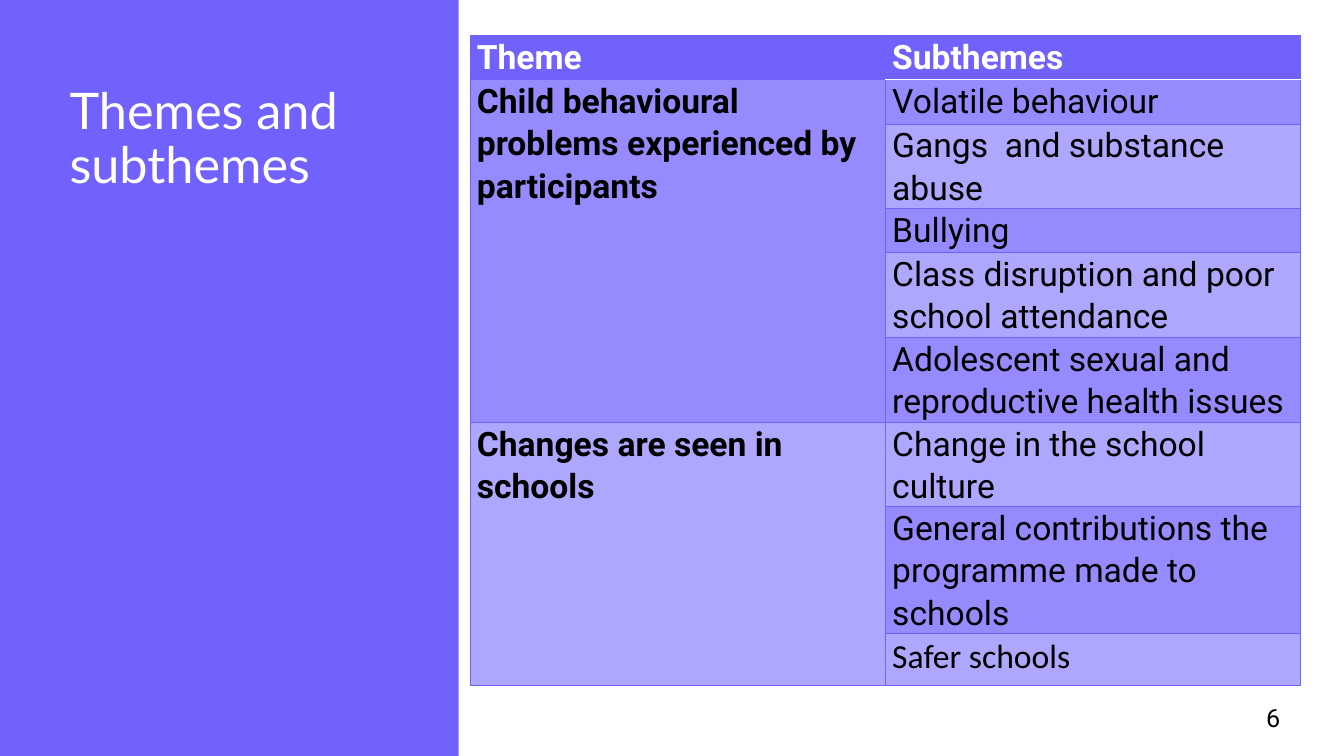
from lxml import etree
from pptx import Presentation
from pptx.dml.color import RGBColor
from pptx.enum import shapes, text
from pptx.oxml import ns
from pptx.util import Inches, Pt

PURPLE = RGBColor(0x71, 0x62, 0xFE)
MID_TINT = RGBColor(0x96, 0x8B, 0xFE)
LIGHT_TINT = RGBColor(0xAE, 0xA7, 0xFE)
WHITE = RGBColor(0xFF, 0xFF, 0xFF)
BLACK = RGBColor(0, 0, 0)

THEMES = [
    ("Child behavioural problems experienced by participants", [
        "Volatile behaviour",
        "Gangs  and substance abuse",
        "Bullying",
        "Class disruption and poor school attendance",
        "Adolescent sexual and reproductive health issues",
    ]),
    ("Changes are seen in schools", [
        "Change in the school culture",
        "General contributions the programme made to schools",
        "Safer schools",
    ]),
]
ROW_HEIGHTS = [0.44, 0.44, 0.83, 0.44, 0.84, 0.84, 0.84, 1.26, 0.51]


def write(tf, words, font="Roboto", size=24, color=BLACK, bold=False,
          line=None, after=None):
    """Put one formatted paragraph in a text frame."""
    tf.word_wrap = True
    p = tf.paragraphs[0]
    p.alignment = text.PP_ALIGN.LEFT
    if line:
        p.line_spacing = line
    if after is not None:
        p.space_after = Pt(after)
    r = p.add_run()
    r.text = words
    r.font.name = font
    r.font.size = Pt(size)
    r.font.bold = bold
    r.font.color.rgb = color


def set_borders(cell, **special):
    """Draw thin purple edges; special maps an edge to (color, points)."""
    tc_pr = cell._tc.get_or_add_tcPr()
    for i, edge in enumerate("LRTB"):
        color, width = special.get(edge, (PURPLE, 0.5))
        ln = etree.Element(ns.qn("a:ln" + edge), w=str(Pt(width)))
        fill = etree.SubElement(ln, ns.qn("a:solidFill"))
        etree.SubElement(fill, ns.qn("a:srgbClr"), val=str(color))
        tc_pr.insert(i, ln)


class Deck:
    def __init__(self):
        self.prs = Presentation()
        self.prs.slide_width = Inches(13.33)
        self.prs.slide_height = Inches(7.5)
        self.s = self.prs.slides.add_slide(self.prs.slide_layouts[6])

    def panel(self, x, y, w, h, words):
        sp = self.s.shapes.add_shape(
            shapes.MSO_SHAPE.RECTANGLE,
            Inches(x), Inches(y), Inches(w), Inches(h))
        sp.shadow.inherit = False
        sp.fill.solid()
        sp.fill.fore_color.rgb = PURPLE
        sp.line.fill.background()
        tf = sp.text_frame
        tf.vertical_anchor = text.MSO_ANCHOR.TOP
        tf.margin_left, tf.margin_top = Inches(0.69), Inches(0.85)
        write(tf, words, font="Lato", size=36, color=WHITE, line=0.9)

    def cell(self, cell, words, fill, borders=None, **fmt):
        cell.margin_left = cell.margin_right = Inches(0.07)
        cell.margin_top = cell.margin_bottom = 0
        cell.fill.solid()
        cell.fill.fore_color.rgb = fill
        set_borders(cell, **(borders or {}))
        if words:
            write(cell.text_frame, words, line=1.07, after=8, **fmt)

    def theme_table(self, x, y, col_width, heights):
        table = self.s.shapes.add_table(
            len(heights), 2, Inches(x), Inches(y),
            Inches(2 * col_width), Inches(sum(heights))).table
        for col in table.columns:
            col.width = Inches(col_width)
        for row, height in zip(table.rows, heights):
            row.height = Inches(height)

        # Header row, with a white rule under the second heading
        white_rule = (WHITE, 1)
        self.cell(table.cell(0, 0), "Theme", PURPLE, color=WHITE, bold=True)
        self.cell(table.cell(0, 1), "Subthemes", PURPLE, {"B": white_rule},
                  color=WHITE, bold=True)

        # Each theme spans its subthemes; row tints alternate
        row = 1
        for theme, subthemes in THEMES:
            first = row
            theme_fill = MID_TINT if first % 2 else LIGHT_TINT
            for subtheme in subthemes:
                self.cell(table.cell(row, 0), theme if row == first else "",
                          theme_fill, bold=True)
                self.cell(table.cell(row, 1), subtheme,
                          MID_TINT if row % 2 else LIGHT_TINT,
                          {"T": white_rule} if row == 1 else None,
                          font="Calibri" if row == len(heights) - 1 else "Roboto")
                row += 1
            table.cell(first, 0).merge(table.cell(row - 1, 0))

    def label(self, x, y, w, h, words, **fmt):
        tb = self.s.shapes.add_textbox(
            Inches(x), Inches(y), Inches(w), Inches(h))
        write(tb.text_frame, words, **fmt)


def main():
    deck = Deck()
    # Title panel
    deck.panel(0, 0, 4.55, 7.5, "Themes and subthemes")
    # Themes table
    deck.theme_table(4.66, 0.35, 4.12, ROW_HEIGHTS)
    # Slide number
    deck.label(12.46, 6.92, 0.87, 0.4, "6", size=18)
    deck.prs.save("out.pptx")


if __name__ == "__main__":
    main()
